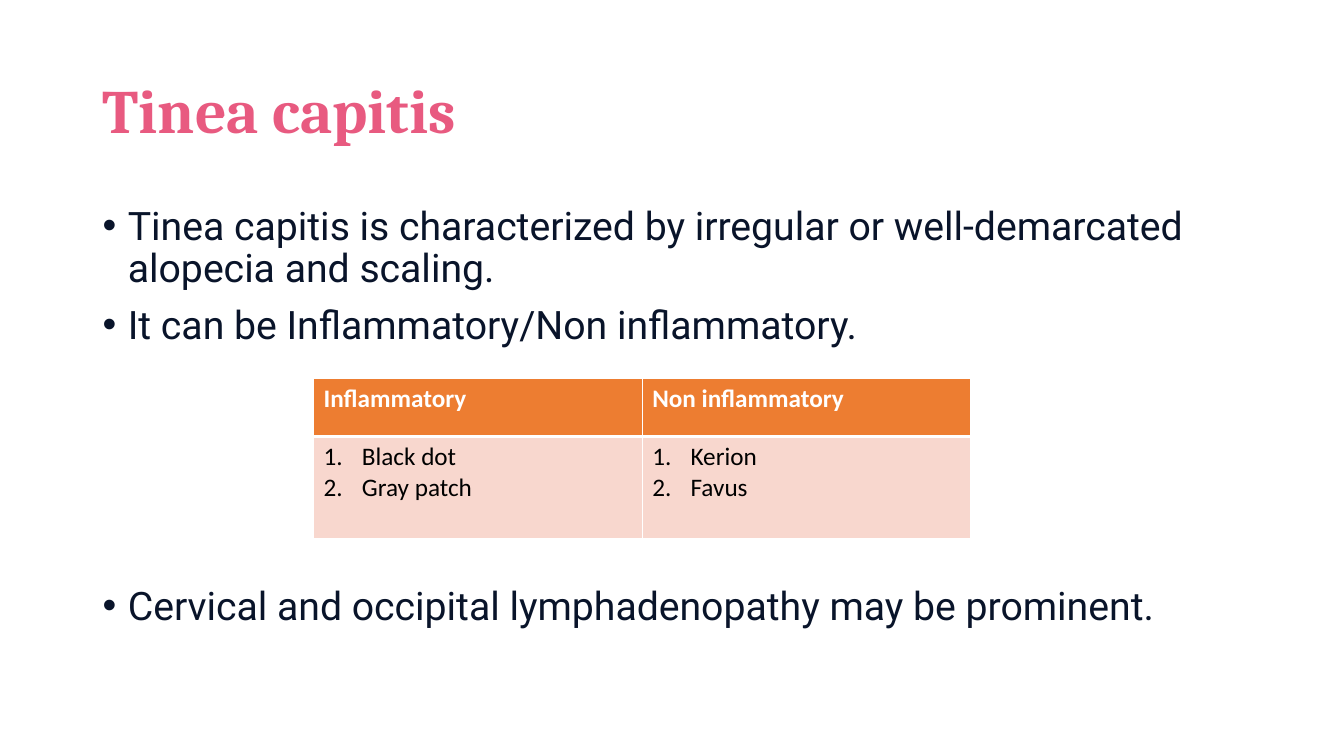
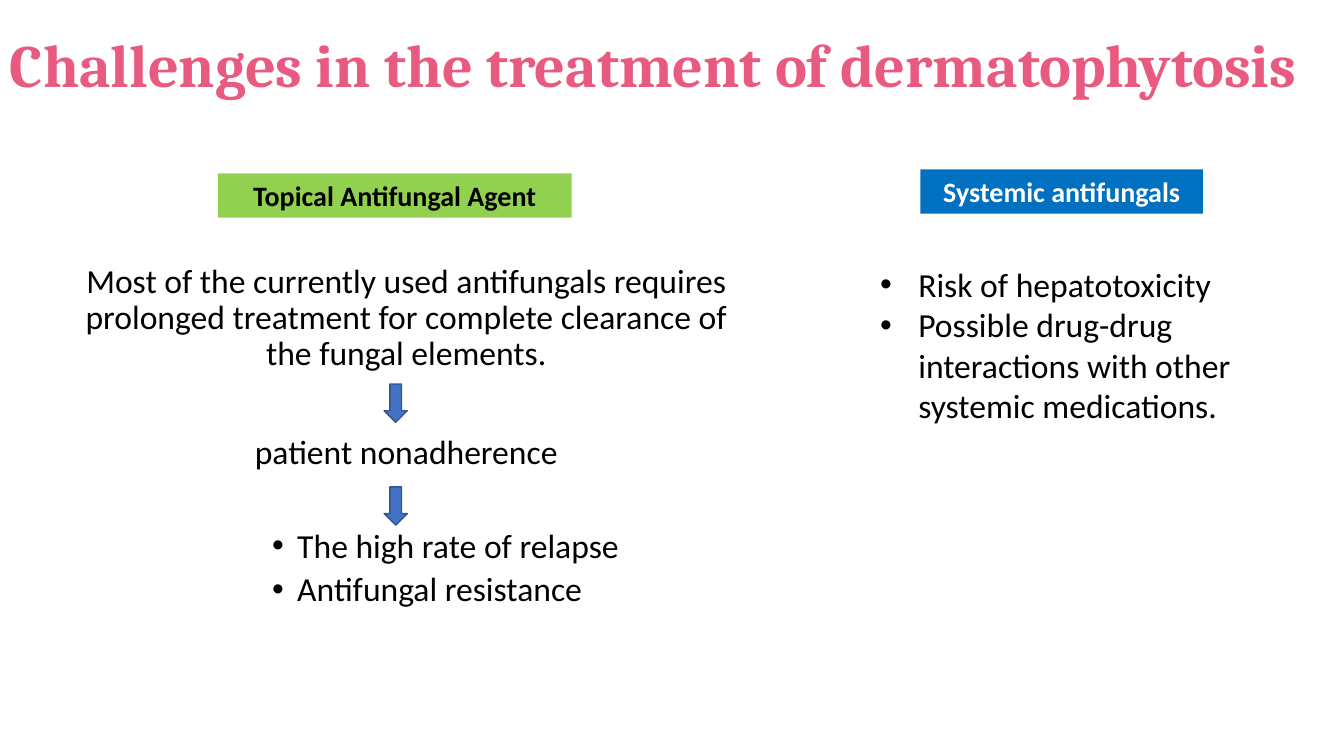
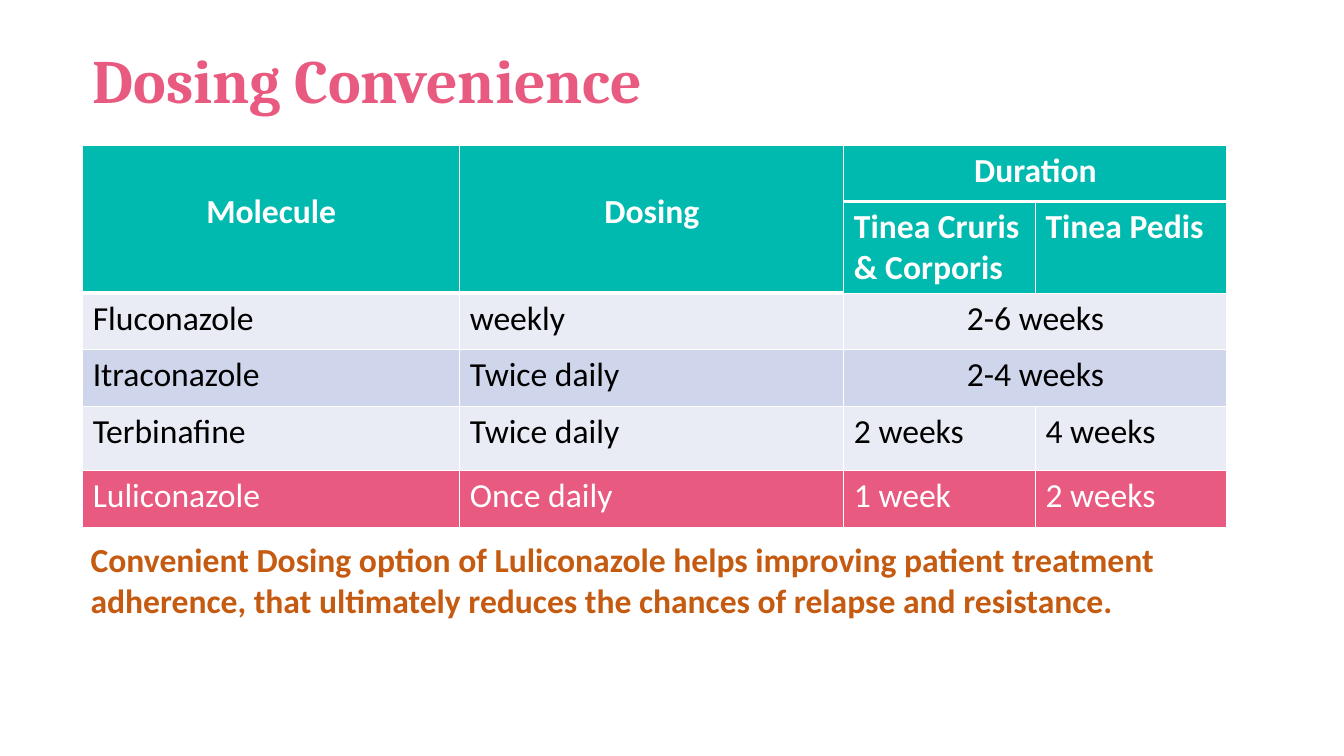
"""Build three slides on tinea capitis, treatment challenges and dosing convenience."""
from lxml.etree import SubElement
from pptx import Presentation
from pptx.dml.color import RGBColor
from pptx.enum.shapes import MSO_SHAPE
from pptx.enum.text import MSO_ANCHOR, PP_ALIGN
from pptx.oxml.ns import qn
from pptx.util import Pt

PX = 9144
SLIDE_SIZE = (1333, 750)

COLOURS = {
    "pink": "E85A80", "navy": "09142A", "black": "000000", "white": "FFFFFF",
    "orange": "ED7D31", "peach": "F8D7CE", "rust": "C55A11", "teal": "00BAAF",
    "pale": "E9EBF5", "lavender": "CFD5EA", "green": "92D050", "blue": "0070C0",
    "arrow": "4472C4", "arrow_edge": "325491",
}


def style(name="Calibri", size=24, colour="black", bold=False, bullet=None, indent=0, **paragraph):
    return {"font": {"name": name, "size": Pt(size), "bold": bold}, "colour": colour,
            "bullet": bullet, "indent": indent, "paragraph": paragraph}


CENTRE = {"alignment": PP_ALIGN.CENTER}
TITLE = {"name": "Cambria", "colour": "pink", "bold": True, "line_spacing": 0.9}
STYLES = {
    "title": style(size=44, **TITLE),
    "wide_title": style(size=43, **TITLE),
    "point": style("Roboto", 28, "navy", bullet="•", indent=25, line_spacing=0.9, space_before=Pt(10)),
    "step": style(line_spacing=0.9, **CENTRE),
    "outcome": style(bullet="•", indent=25, line_spacing=0.9, space_before=Pt(5)),
    "risk": style(bullet="•", indent=38),
    "conclusion": style(colour="rust", bold=True),
    "dark_label": style(size=20, bold=True, **CENTRE),
    "light_label": style(size=20, colour="white", bold=True, **CENTRE),
    "type_head": style(size=18, colour="white", bold=True),
    "type_list": style(size=18, bullet="1.", indent=38),
    "dose_head": style(colour="white", bold=True),
    "dose_head_centre": style(colour="white", bold=True, **CENTRE),
    "dose": style(),
    "dose_centre": style(**CENTRE),
    "dose_highlight": style(colour="white"),
}

SLIDES = [
    {
        "title": ("Tinea capitis", "title", (92, 40, 1150, 145)),
        "texts": [
            (["Tinea capitis is characterized by irregular or well-demarcated alopecia and scaling.",
              "It can be Inflammatory/Non inflammatory."], "point", (92, 200, 1150, 155)),
            (["Cervical and occipital lymphadenopathy may be prominent."], "point", (92, 577, 1150, 55)),
        ],
        "table": {
            "at": (311, 375), "columns": (326, 326), "heights": (58, 101),
            "rows": [
                ("orange", "type_head", ["Inflammatory", "Non inflammatory"]),
                ("peach", "type_list", ["Black dot\nGray patch", "Kerion\nFavus"]),
            ],
            "merges": [], "heavy": [(0, 0), (0, 1)],
        },
    },
    {
        "title": ("Challenges in the treatment of dermatophytosis", "wide_title", (0, 41, 1333, 54)),
        "texts": [
            (["Most of the currently used antifungals requires prolonged treatment for complete "
              "clearance of the fungal elements."], "step", (60, 257, 686, 120)),
            (["patient nonadherence"], "step", (60, 427, 686, 47)),
            (["The high rate of relapse", "Antifungal resistance"], "outcome", (260, 520, 486, 90)),
            (["Risk of hepatotoxicity",
              "Possible drug-drug interactions with other systemic medications."],
             "risk", (863, 257, 454, 172)),
        ],
        "labels": [
            ("Topical Antifungal Agent", "dark_label", "green", (216, 172, 351, 44)),
            ("Systemic antifungals", "light_label", "blue", (913, 168, 280, 44)),
        ],
        "arrows": [(381, 381, 23, 38), (381, 483, 23, 38)],
    },
    {
        "title": ("Dosing Convenience", "title", (82, 10, 1150, 145)),
        "texts": [
            (["Convenient Dosing option of Luliconazole helps improving patient treatment adherence, "
              "that ultimately reduces the chances of relapse and resistance."],
             "conclusion", (80, 530, 1173, 91)),
        ],
        "table": {
            "at": (82, 144), "columns": (374, 381, 190, 190), "heights": (56, 91, 56, 56, 64, 56),
            "rows": [
                ("teal", "dose_head", ["Molecule", "Dosing", "Duration", None]),
                ("teal", "dose_head", [None, None, "Tinea Cruris & Corporis", "Tinea Pedis"]),
                ("pale", "dose", ["Fluconazole", "weekly", "2-6 weeks", None]),
                ("lavender", "dose", ["Itraconazole", "Twice daily", "2-4 weeks", None]),
                ("pale", "dose", ["Terbinafine", "Twice daily", "2 weeks", "4 weeks"]),
                ("pink", "dose_highlight", ["Luliconazole", "Once daily", "1 week", "2 weeks"]),
            ],
            "merges": [((0, 0), (1, 0)), ((0, 1), (1, 1)), ((0, 2), (0, 3)),
                       ((2, 2), (2, 3)), ((3, 2), (3, 3))],
            "heavy": [(0, 0), (0, 1), (0, 2), (0, 3), (1, 0), (1, 1)],
        },
    },
]


def emu(lengths):
    return [length * PX for length in lengths]


def rgb(colour):
    return RGBColor.from_string(COLOURS[colour])


def set_all(target, values):
    for attribute, value in values.items():
        setattr(target, attribute, value)


def paint(part, colour):
    part.fill.solid()
    part.fill.fore_color.rgb = rgb(colour)


def add_bullet(paragraph, bullet, indent):
    properties = paragraph._p.get_or_add_pPr()
    properties.set("marL", str(indent * PX))
    properties.set("indent", str(-indent * PX))
    if bullet == "1.":
        SubElement(properties, qn("a:buFont"), typeface="+mj-lt")
        SubElement(properties, qn("a:buAutoNum"), type="arabicPeriod")
    else:
        SubElement(properties, qn("a:buFont"), typeface="Arial")
        SubElement(properties, qn("a:buChar"), char=bullet)


def write(frame, lines, style_name):
    look = STYLES[style_name]
    for index, line in enumerate(lines):
        paragraph = frame.add_paragraph() if index else frame.paragraphs[0]
        if look["bullet"]:
            add_bullet(paragraph, look["bullet"], look["indent"])
        set_all(paragraph, look["paragraph"])
        if index == 0:
            paragraph.space_before = Pt(0)
        run = paragraph.add_run()
        run.text = line
        set_all(run.font, look["font"])
        run.font.color.rgb = rgb(look["colour"])


def add_text(slide, lines, style_name, box, anchor=MSO_ANCHOR.TOP):
    frame = slide.shapes.add_textbox(*emu(box)).text_frame
    set_all(frame, {"word_wrap": True, "vertical_anchor": anchor})
    write(frame, lines, style_name)


def add_flat_shape(slide, preset, colour, box):
    shape = slide.shapes.add_shape(preset, *emu(box))
    shape.shadow.inherit = False
    paint(shape, colour)
    return shape


def add_label(slide, text, style_name, colour, box):
    label = add_flat_shape(slide, MSO_SHAPE.RECTANGLE, colour, box)
    label.line.fill.background()
    write(label.text_frame, [text], style_name)


def add_arrow(slide, box):
    arrow = add_flat_shape(slide, MSO_SHAPE.DOWN_ARROW, "arrow", box)
    arrow.line.color.rgb = rgb("arrow_edge")
    arrow.line.width = Pt(1)


def add_borders(cell, heavy):
    properties = cell._tc.get_or_add_tcPr()
    for position, side in enumerate("LRTB"):
        width = Pt(3 if heavy and side == "B" else 1)
        border = properties.makeelement(qn(f"a:ln{side}"), {"w": str(width)})
        fill = SubElement(border, qn("a:solidFill"))
        SubElement(fill, qn("a:srgbClr"), val=COLOURS["white"])
        properties.insert(position, border)


def add_grid(slide, data):
    columns, heights = data["columns"], data["heights"]
    box = (*data["at"], sum(columns), sum(heights))
    table = slide.shapes.add_table(len(heights), len(columns), *emu(box)).table
    for column, width in zip(table.columns, emu(columns)):
        column.width = width
    for row, height in zip(table.rows, emu(heights)):
        row.height = height
    merges = dict(data["merges"])
    for first, last in merges.items():
        table.cell(*first).merge(table.cell(*last))
    for r, (colour, row_style, texts) in enumerate(data["rows"]):
        for c, text in enumerate(texts):
            cell = table.cell(r, c)
            paint(cell, colour)
            add_borders(cell, (r, c) in data["heavy"])
            if text is None:
                continue
            merged = (r, c) in merges
            write(cell.text_frame, text.split("\n"), row_style + "_centre" * merged)
            if merged and merges[r, c][0] > r:
                set_all(cell, {"vertical_anchor": MSO_ANCHOR.MIDDLE,
                               "margin_top": 0, "margin_bottom": 14 * PX})


def main():
    deck = Presentation()
    deck.slide_width, deck.slide_height = emu(SLIDE_SIZE)
    for content in SLIDES:
        slide = deck.slides.add_slide(deck.slide_layouts[6])
        title, title_style, title_box = content["title"]
        add_text(slide, [title], title_style, title_box, MSO_ANCHOR.MIDDLE)
        for text in content["texts"]:
            add_text(slide, *text)
        for arrow_box in content.get("arrows", []):
            add_arrow(slide, arrow_box)
        for label in content.get("labels", []):
            add_label(slide, *label)
        if "table" in content:
            add_grid(slide, content["table"])
    deck.save("out.pptx")


if __name__ == "__main__":
    main()
